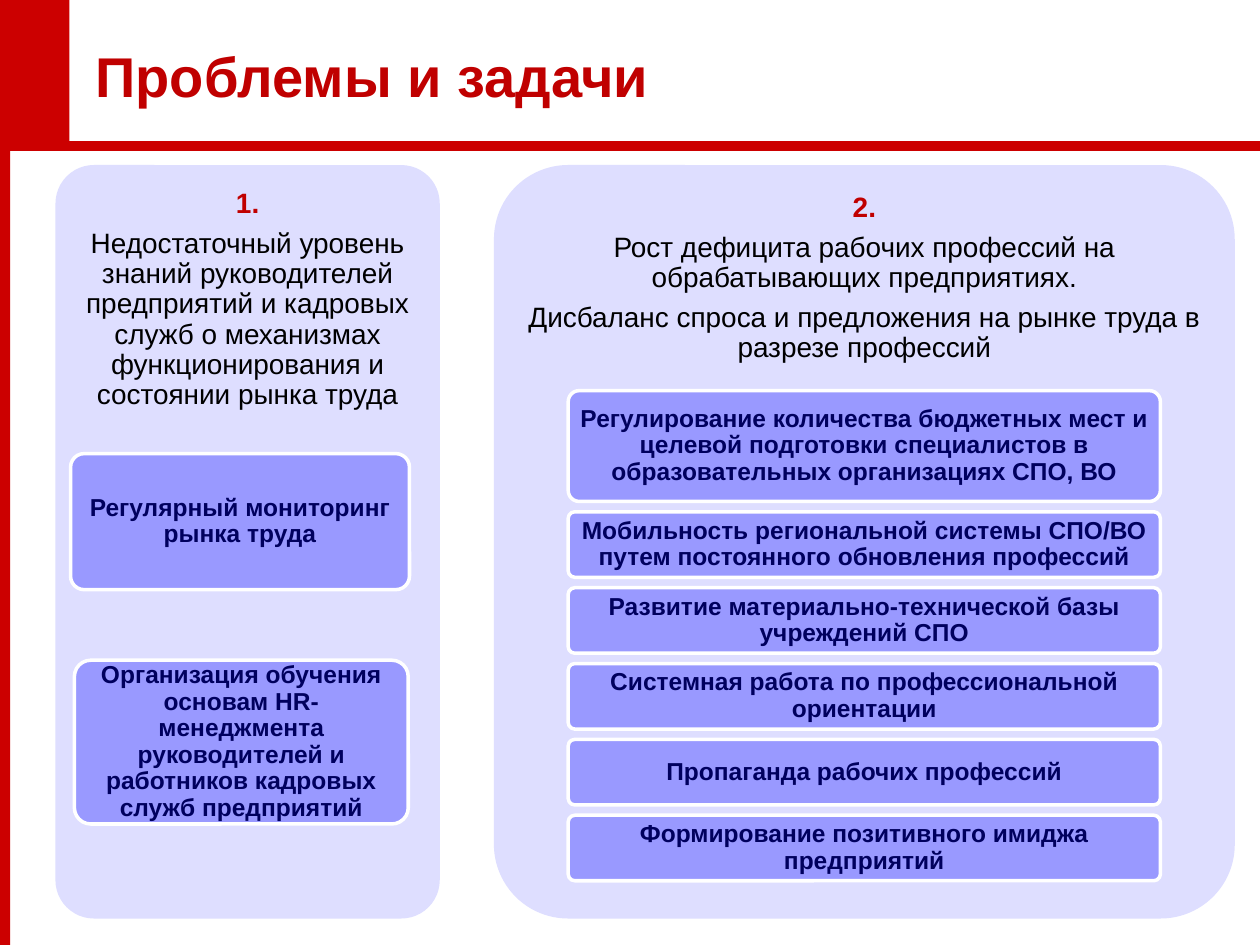
from dataclasses import dataclass

from lxml import etree
from pptx import Presentation
from pptx.dml.color import RGBColor
from pptx.enum.shapes import MSO_CONNECTOR, MSO_SHAPE
from pptx.enum.text import MSO_ANCHOR, PP_ALIGN
from pptx.oxml.ns import qn
from pptx.util import Inches, Pt


@dataclass(frozen=True)
class Theme:
    font: str = "Arial"
    frame: RGBColor = RGBColor(0xCC, 0x00, 0x00)
    accent: RGBColor = RGBColor(0xC0, 0x00, 0x00)
    panel: RGBColor = RGBColor(0xDE, 0xDE, 0xFF)
    card: RGBColor = RGBColor(0x99, 0x99, 0xFF)
    card_text: RGBColor = RGBColor(0x00, 0x00, 0x5E)
    body: RGBColor = RGBColor(0x00, 0x00, 0x00)
    border: RGBColor = RGBColor(0xFF, 0xFF, 0xFF)
    title_size: int = 32
    heading_size: int = 16
    card_size: int = 14


THEME = Theme()
PANEL_TOP, PANEL_HEIGHT = 1.31, 5.98
HEADING_HEIGHT = 1.8


def add_block(slide, box, fill, kind=MSO_SHAPE.RECTANGLE):
    """Add a plain filled shape without outline or shadow."""
    shape = slide.shapes.add_shape(kind, *map(Inches, box))
    shape.shadow.inherit = False
    shape.fill.solid()
    shape.fill.fore_color.rgb = fill
    shape.line.fill.background()
    if kind == MSO_SHAPE.ROUNDED_RECTANGLE:
        shape.adjustments[0] = 0.1
    return shape


def set_text_frame(shape, side, edge):
    frame = shape.text_frame
    frame.word_wrap = True
    frame.vertical_anchor = MSO_ANCHOR.MIDDLE
    frame.margin_left = frame.margin_right = Inches(side)
    frame.margin_top = frame.margin_bottom = Inches(edge)
    return frame


def add_run(paragraph, text, size, color, bold):
    run = paragraph.add_run()
    run.text = text
    run.font.name = THEME.font
    run.font.size = Pt(size)
    run.font.bold = bold
    run.font.color.rgb = color


def center_paragraph(paragraph, space_after=0):
    paragraph.alignment = PP_ALIGN.CENTER
    paragraph.line_spacing = 0.9
    paragraph.space_after = Pt(space_after)


def add_frame(slide, width, height):
    """Add the red corner, side bar and rule around the slide."""
    add_block(slide, (0, 0, 0.08, height), THEME.frame)
    rule = slide.shapes.add_connector(
        MSO_CONNECTOR.STRAIGHT, 0, Inches(1.16), Inches(width), Inches(1.16))
    rule.line.color.rgb = THEME.frame
    rule.line.width = Pt(6)
    etree.SubElement(rule._element.spPr, qn("a:effectLst"))
    add_block(slide, (0, 0, 0.55, 1.14), THEME.frame)


def add_title(slide, box, text):
    title = slide.shapes.add_textbox(*map(Inches, box))
    frame = set_text_frame(title, 0.1, 0.05)
    add_run(frame.paragraphs[0], text, THEME.title_size, THEME.accent, True)


def add_card(slide, box, text):
    card = add_block(slide, box, THEME.card, MSO_SHAPE.ROUNDED_RECTANGLE)
    card.line.color.rgb = THEME.border
    card.line.width = Pt(2)
    paragraph = set_text_frame(card, 0.04, 0.03).paragraphs[0]
    center_paragraph(paragraph)
    add_run(paragraph, text, THEME.card_size, THEME.card_text, True)


def add_heading(slide, box, number, problems):
    heading = slide.shapes.add_textbox(*map(Inches, box))
    frame = set_text_frame(heading, 0.07, 0.07)
    paragraph = frame.paragraphs[0]
    center_paragraph(paragraph, 5.6)
    add_run(paragraph, number, THEME.heading_size, THEME.accent, True)
    for problem in problems:
        paragraph = frame.add_paragraph()
        center_paragraph(paragraph, 5.6)
        add_run(paragraph, problem, THEME.heading_size, THEME.body, False)


def add_panel(slide, left, width, number, problems, cards, heading_shift=0):
    """Add a panel with its problem heading and (box, text) task cards."""
    add_block(slide, (left, PANEL_TOP, width, PANEL_HEIGHT), THEME.panel,
              MSO_SHAPE.ROUNDED_RECTANGLE)
    heading_box = (left, PANEL_TOP + heading_shift, width, HEADING_HEIGHT)
    add_heading(slide, heading_box, number, problems)
    for box, text in cards:
        add_card(slide, box, text)


def stack_cards(box, heights, texts):
    """Spread cards of the given heights down the box with equal gaps."""
    left, top, width, height = box
    gap = (height - sum(heights)) / (len(heights) - 1)
    cards = []
    for card_height, text in zip(heights, texts):
        cards.append(((left, top, width, card_height), text))
        top += card_height + gap
    return cards


def main():
    width, height = 10, 7.5
    presentation = Presentation()
    presentation.slide_width = Inches(width)
    presentation.slide_height = Inches(height)
    slide = presentation.slides.add_slide(presentation.slide_layouts[6])

    add_frame(slide, width, height)
    add_title(slide, (0.66, 0.13, 8.28, 0.94), "Проблемы и задачи")

    knowledge_cards = [
        ((0.56, 3.6, 2.69, 1.08), "Регулярный мониторинг рынка труда"),
        ((0.59, 5.24, 2.65, 1.3),
         "Организация обучения основам HR-менеджмента руководителей "
         "и работников кадровых служб предприятий"),
    ]
    add_panel(
        slide, 0.44, 3.05, "1.",
        ["Недостаточный уровень знаний руководителей предприятий и кадровых "
         "служб о механизмах функционирования и состоянии рынка труда"],
        knowledge_cards, heading_shift=0.17)

    workforce_tasks = [
        "Регулирование количества бюджетных мест и целевой подготовки "
        "специалистов в образовательных организациях СПО, ВО",
        "Мобильность региональной системы СПО/ВО путем постоянного "
        "обновления профессий",
        "Развитие материально-технической базы учреждений СПО",
        "Системная работа по профессиональной ориентации",
        "Пропаганда рабочих профессий",
        "Формирование позитивного имиджа предприятий",
    ]
    add_panel(
        slide, 3.92, 5.88, "2.",
        ["Рост дефицита рабочих профессий на обрабатывающих предприятиях.",
         "Дисбаланс спроса и предложения на рынке труда в разрезе профессий"],
        stack_cards((4.51, 3.1, 4.7, 3.89), [0.88] + [0.52] * 5,
                    workforce_tasks))

    presentation.save("out.pptx")


if __name__ == "__main__":
    main()
